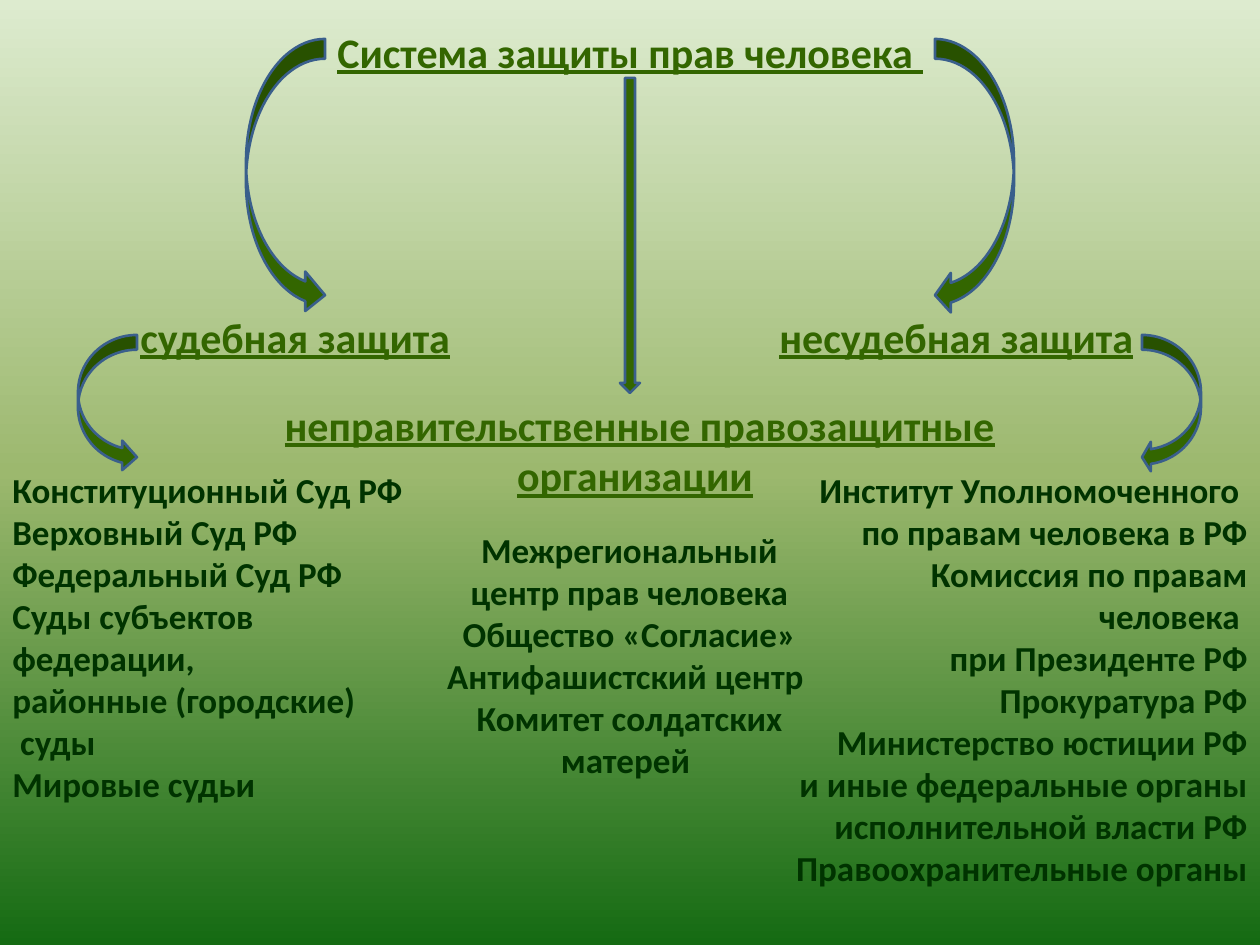
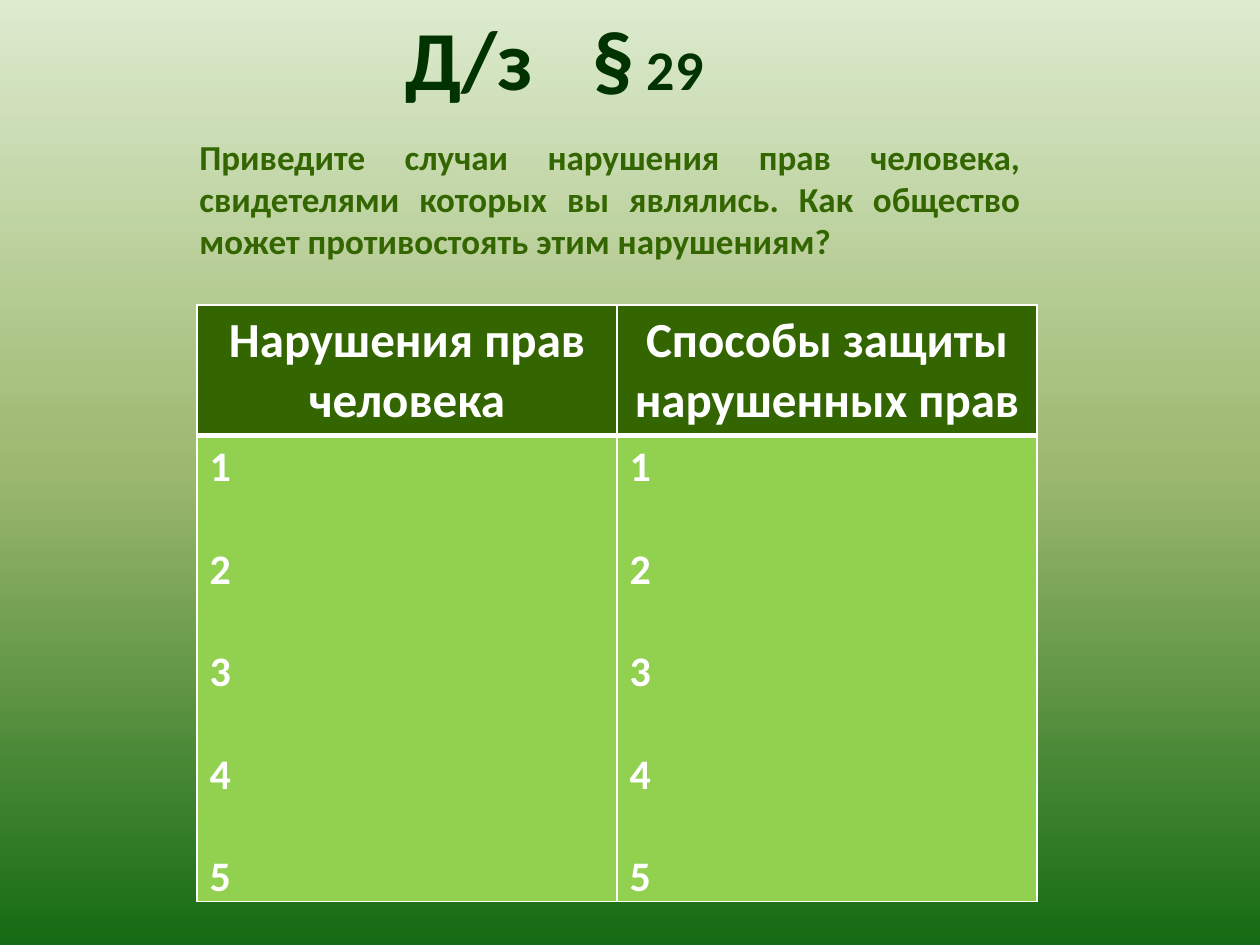
from copy import deepcopy

from lxml.etree import SubElement
from pptx import Presentation
from pptx.dml.color import RGBColor
from pptx.enum.shapes import MSO_SHAPE as Shape
from pptx.enum.text import PP_ALIGN as Align
from pptx.oxml import parse_xml
from pptx.oxml.ns import nsdecls, qn
from pptx.util import Emu, Pt

FONT = "Calibri"
LEAF, FOREST, LIME, WHITE = "336600", "003300", "92D050", "FFFFFF"
ARROW_EDGE = "3A5F8C"
BACKDROP = [(0, "DDEBCF"), (0.5, "9CB86E"), (1, "156B13")]

COURTS = ["Конституционный Суд РФ", "Верховный Суд РФ", "Федеральный Суд РФ",
          "Суды субъектов", "федерации,", "районные (городские)", " суды",
          "Мировые судьи"]
STATE_BODIES = ["Институт Уполномоченного ", "по правам человека в РФ",
                "Комиссия по правам человека ", "при Президенте РФ",
                "Прокуратура РФ", "Министерство юстиции РФ",
                " и иные федеральные органы исполнительной власти РФ",
                "Правоохранительные органы"]
SOCIETIES = ["Межрегиональный центр прав человека", "Общество «Согласие»",
             "Антифашистский центр ", "Комитет солдатских матерей "]
TASK = ("Приведите случаи нарушения прав человека, свидетелями которых вы "
        "являлись. Как общество может противостоять этим нарушениям?")
HEADERS = [["Нарушения прав человека"], ["Способы защиты", "нарушенных прав"]]
NUMBERS = ["1", "2", "3", "4", "5"]


def px(length):
    return Emu(round(length * 914400 / 126))


def rgb(code):
    return RGBColor.from_string(code)


def write(frame, lines, align=Align.LEFT, gap=0, **style):
    """Fill a frame; a line is a string or a list of (text, style changes)."""
    frame.word_wrap = True
    for index, line in enumerate(lines):
        paragraph = frame.paragraphs[0] if index == 0 else frame.add_paragraph()
        paragraph.alignment = align
        paragraph.space_before = Pt(gap if index else 0)
        for text, changes in [(line, {})] if isinstance(line, str) else line:
            look = {"size": 20, "color": FOREST, "underline": False, **style, **changes}
            run = paragraph.add_run()
            run.text = text
            font = run.font
            font.name, font.size, font.bold = FONT, Pt(look["size"]), True
            font.underline = look["underline"]
            font.color.rgb = rgb(look["color"])


def add_text(slide, box, lines, **style):
    frame = slide.shapes.add_textbox(*map(px, box)).text_frame
    write(frame, lines, **style)
    return frame


def add_heading(slide, box, lines, **style):
    add_text(slide, box, lines, **{"size": 24, "color": LEAF, "underline": True, **style})


def add_arrow(slide, kind, box, adjustments=()):
    arrow = slide.shapes.add_shape(kind, *map(px, box))
    arrow.shadow.inherit = False
    arrow.fill.solid()
    arrow.fill.fore_color.rgb = rgb(LEAF)
    arrow.line.color.rgb = rgb(ARROW_EDGE)
    arrow.line.width = Pt(1.5)
    for index, value in enumerate(adjustments):
        arrow.adjustments[index] = value


def add_slide(deck):
    slide = deck.slides.add_slide(deck.slide_layouts[6])
    fill = slide.background.fill
    fill.gradient()
    fill.gradient_angle = 270
    stops = slide.element.find(".//" + qn("a:gsLst"))
    stops.append(deepcopy(stops[-1]))
    for stop, (position, color) in zip(fill.gradient_stops, BACKDROP):
        stop.position = position
        stop.color.rgb = rgb(color)
    return slide


def style_cell(cell, fill, bottom=1):
    cell.fill.solid()
    cell.fill.fore_color.rgb = rgb(fill)
    properties = cell._tc.get_or_add_tcPr()
    widths = {"lnL": 1, "lnR": 1, "lnT": 1, "lnB": bottom}
    for index, (side, width) in enumerate(widths.items()):
        properties.insert(index, parse_xml(
            f'<a:{side} {nsdecls("a")} w="{Pt(width)}"><a:solidFill>'
            f'<a:srgbClr val="{WHITE}"/></a:solidFill></a:{side}>'))


def add_violations_table(slide):
    table = slide.shapes.add_table(2, 2, *map(px, (197, 305, 840, 596))).table
    table.first_row = table.horz_banding = False
    for row, height in zip(table.rows, (130, 466)):
        row.height = px(height)
    for column, header in enumerate(HEADERS):
        title, answers = table.cell(0, column), table.cell(1, column)
        style_cell(title, LEAF, bottom=3)
        write(title.text_frame, header, align=Align.CENTER, size=28, color=WHITE)
        style_cell(answers, LIME)
        answers.margin_bottom = 0
        write(answers.text_frame, NUMBERS, gap=29.3, size=24, color=WHITE)


def build_protection_system(deck):
    slide = add_slide(deck)
    add_heading(slide, (271, 20, 718, 106), ["Система защиты прав человека "],
                align=Align.CENTER)
    add_text(slide, (777, 462, 483, 437), STATE_BODIES, align=Align.RIGHT)
    add_heading(slide, (128, 305, 339, 63), ["судебная защита"])
    add_heading(slide, (767, 305, 392, 63), ["несудебная защита"])
    add_heading(slide, (256, 393, 758, 115),
                [[(" ", {"underline": False}), ("неправительственные правозащитные", {})],
                 "организации"], align=Align.CENTER)
    add_arrow(slide, Shape.CURVED_RIGHT_ARROW, (246, 39, 79, 276))
    add_arrow(slide, Shape.CURVED_LEFT_ARROW, (935, 39, 79, 276), (0.25, 0.5, 0.2))
    add_arrow(slide, Shape.DOWN_ARROW, (620, 78, 20, 315))
    add_arrow(slide, Shape.CURVED_LEFT_ARROW, (1142, 335, 59, 137), (0.25, 0.5, 0.15))
    add_arrow(slide, Shape.CURVED_RIGHT_ARROW, (78, 335, 59, 137))
    add_text(slide, (423, 522, 413, 267), SOCIETIES, align=Align.CENTER)
    add_text(slide, (0, 462, 418, 352), COURTS)


def build_homework(deck):
    slide = add_slide(deck)
    add_violations_table(slide)
    title = add_text(slide, (393, 0, 330, 115), [[("Д/з\t§", {}), (" 29", {"size": 32})]],
                     size=48)
    tabs = SubElement(title.paragraphs[0]._p.get_or_add_pPr(), qn("a:tabLst"))
    SubElement(tabs, qn("a:tab"), pos=str(px(187)), algn="l")
    add_text(slide, (187, 129, 846, 140), [TASK], align=Align.JUSTIFY, color=LEAF)


def main():
    deck = Presentation()
    deck.slide_width, deck.slide_height = px(1260), px(945)
    build_protection_system(deck)
    build_homework(deck)
    deck.save("out.pptx")


if __name__ == "__main__":
    main()
